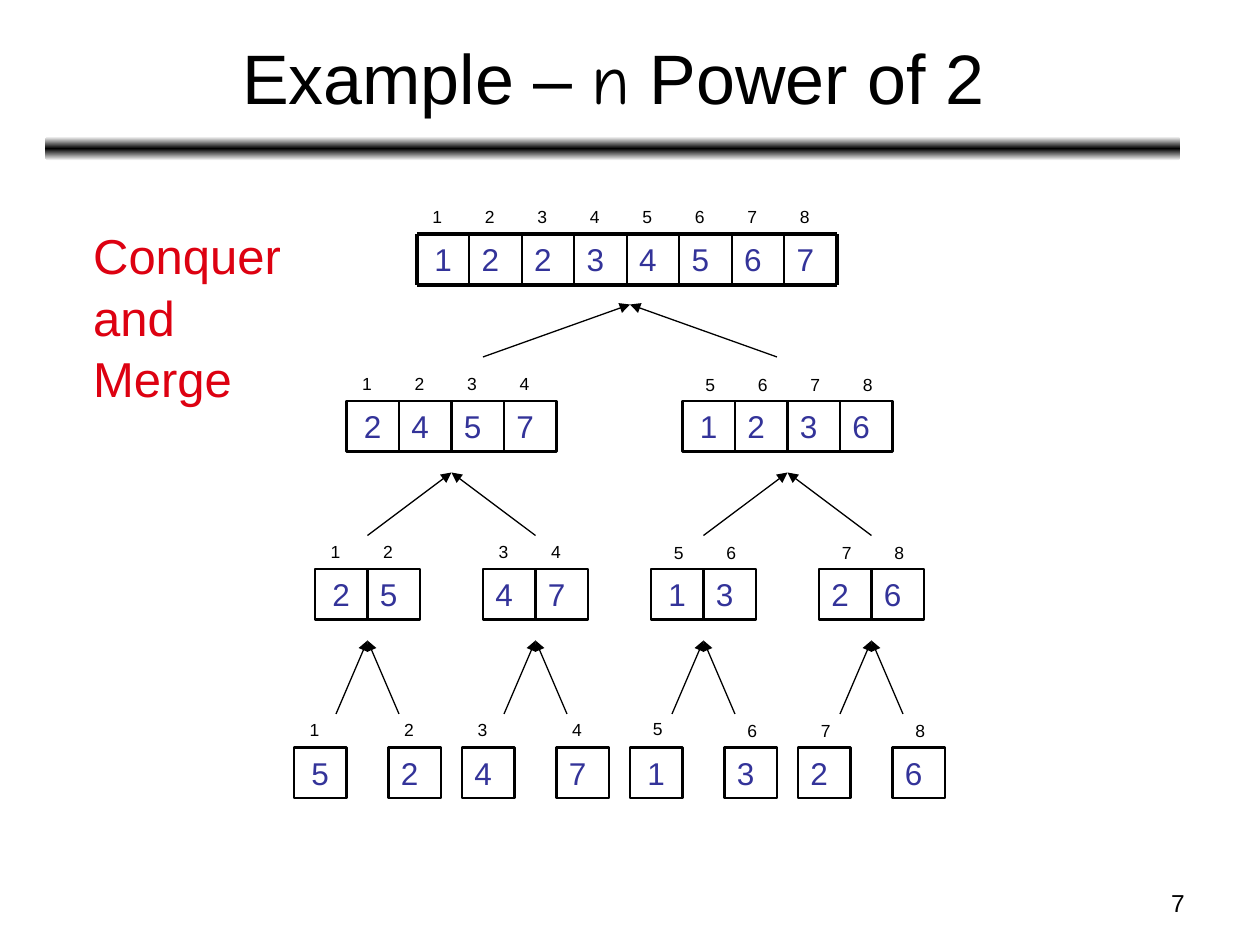
from dataclasses import dataclass

from lxml.etree import SubElement
from pptx import Presentation
from pptx.dml.color import RGBColor
from pptx.enum.shapes import MSO_CONNECTOR, MSO_SHAPE
from pptx.enum.text import MSO_ANCHOR, MSO_AUTO_SIZE, PP_ALIGN
from pptx.oxml.ns import qn
from pptx.util import Emu, Pt

EMU_PER_PX = 7620  # 120 px to the inch
CELL_W, CELL_H = 50, 48
LABEL_W, LABEL_H = 30, 32
BLACK, WHITE, NAVY, RED = "000000", "FFFFFF", "333399", "DD0111"


@dataclass(frozen=True)
class Block:
    """A run of neighbouring array cells; first is the index of its first cell."""
    left: int
    first: int
    values: str
    label_left: int
    label_top: int
    lead_centered: bool = False


@dataclass(frozen=True)
class Level:
    """One level of the merge tree, with the arrows that lead up to it."""
    top: int
    blocks: tuple[Block, ...]
    apexes: tuple[int, ...] = ()
    apex_y: int = 0
    foot_y: int = 0
    spread: int = 0
    ruled: bool = False


LEVELS = (
    Level(712, (
        Block(280, 1, "5", 283, 679, True),
        Block(370, 2, "2", 373, 679),
        Block(440, 3, "4", 443, 679),
        Block(530, 4, "7", 533, 679),
        Block(600, 5, "1", 610, 678, True),
        Block(690, 6, "3", 700, 680),
        Block(760, 7, "2", 770, 680),
        Block(850, 8, "6", 860, 680),
    )),
    Level(223, (Block(397, 1, "12234567", 400, 190, True),),
          (600,), 290, 340, 140, ruled=True),
    Level(382, (
        Block(330, 1, "2457", 333, 349, True),
        Block(650, 5, "1236", 660, 350, True),
    ), (430, 750), 450, 510, 80),
    Level(542, (
        Block(300, 1, "25", 303, 509, True),
        Block(460, 3, "47", 463, 509),
        Block(620, 5, "13", 630, 510, True),
        Block(780, 7, "26", 790, 510),
    ), (350, 510, 670, 830), 610, 680, 30),
)


def px(length: int) -> Emu:
    return Emu(length * EMU_PER_PX)


def rgb(color: str) -> RGBColor:
    return RGBColor.from_string(color)


def write(shape, lines: list[str], size: int, color: str,
          align=PP_ALIGN.LEFT, anchor=MSO_ANCHOR.TOP, wrap: bool = True):
    frame = shape.text_frame
    frame.word_wrap = wrap
    frame.vertical_anchor = anchor
    frame.text = "\n".join(lines)
    for paragraph in frame.paragraphs:
        paragraph.alignment = align
        paragraph.font.name = "Arial"
        paragraph.font.size = Pt(size)
        paragraph.font.color.rgb = rgb(color)
    return frame


def add_text(shapes, left: int, top: int, width: int, height: int, *args, **kwargs):
    box = shapes.add_textbox(px(left), px(top), px(width), px(height))
    return write(box, *args, **kwargs)


def add_line(shapes, x1: int, y1: int, x2: int, y2: int, weight: float,
             arrow: bool = False) -> None:
    line = shapes.add_connector(MSO_CONNECTOR.STRAIGHT, px(x1), px(y1), px(x2), px(y2))
    line.line.color.rgb = rgb(BLACK)
    line.line.width = Pt(weight)
    if arrow:
        SubElement(line.line._get_or_add_ln(), qn("a:headEnd"), type="triangle")
    SubElement(line._element.spPr, qn("a:effectLst"))


def add_cell(shapes, left: int, top: int, value: str, centered: bool, boxed: bool) -> None:
    area = px(left), px(top), px(CELL_W), px(CELL_H)
    if boxed:
        cell = shapes.add_shape(MSO_SHAPE.RECTANGLE, *area)
        cell.shadow.inherit = False
        cell.fill.background()
        cell.line.color.rgb = rgb(BLACK)
        cell.line.width = Pt(1.5)
    else:
        cell = shapes.add_textbox(*area)
    frame = write(cell, [value], 18, NAVY,
                  align=PP_ALIGN.CENTER if centered else PP_ALIGN.LEFT,
                  anchor=MSO_ANCHOR.MIDDLE if centered else MSO_ANCHOR.TOP)
    frame.paragraphs[0].space_before = Pt(3.6)


def add_block(shapes, block: Block, top: int, boxed: bool) -> None:
    for i, value in enumerate(block.values):
        label = add_text(shapes, block.label_left + i * CELL_W, block.label_top,
                         LABEL_W, LABEL_H, [str(block.first + i)], 10, BLACK)
        label.auto_size = MSO_AUTO_SIZE.SHAPE_TO_FIT_TEXT
        add_cell(shapes, block.left + i * CELL_W, top, value,
                 block.lead_centered and i == 0, boxed)


def add_rules(shapes, block: Block, top: int) -> None:
    count = len(block.values)
    right, bottom = block.left + count * CELL_W, top + CELL_H
    for y in (top, bottom):
        add_line(shapes, block.left, y, right, y, 2.25)
    for i in range(count + 1):
        x = block.left + i * CELL_W
        add_line(shapes, x, top, x, bottom, 2.25 if i in (0, count) else 1)


def add_level(slide, level: Level) -> None:
    shapes = slide.shapes.add_group_shape().shapes
    for block in level.blocks:
        add_block(shapes, block, level.top, not level.ruled)
        if level.ruled:
            add_rules(shapes, block, level.top)
    for apex in level.apexes:
        for foot in (apex - level.spread, apex + level.spread):
            add_line(shapes, apex, level.apex_y, foot, level.foot_y, 0.75, arrow=True)


def add_divider(slide) -> None:
    bar = slide.shapes.add_shape(MSO_SHAPE.ROUNDED_RECTANGLE,
                                 px(43), px(130), px(1081), px(23))
    bar.shadow.inherit = False
    bar.line.fill.background()
    bar.fill.gradient()
    bar.fill.gradient_angle = 90
    stops = bar._element.spPr.find(qn("a:gradFill")).find(qn("a:gsLst"))
    for stop in list(stops):
        stops.remove(stop)
    for position, color in ((0, WHITE), (50000, BLACK), (100000, WHITE)):
        stop = SubElement(stops, qn("a:gs"), pos=str(position))
        SubElement(stop, qn("a:srgbClr"), val=color)


def add_title(slide) -> None:
    frame = add_text(slide.shapes, 44, 13, 1080, 119, [""], 40, BLACK,
                     align=PP_ALIGN.CENTER, anchor=MSO_ANCHOR.MIDDLE)
    for text, font in (("Example – ", "Arial"), ("n", "Comic Neue"),
                       (" Power of 2", "Arial")):
        run = frame.paragraphs[0].add_run()
        run.text = text
        run.font.name = font


def main() -> None:
    deck = Presentation()
    deck.slide_width, deck.slide_height = px(1200), px(900)
    slide = deck.slides.add_slide(deck.slide_layouts[6])

    # Heading and page number
    add_divider(slide)
    add_text(slide.shapes, 860, 840, 280, 42, ["7"], 14, BLACK, align=PP_ALIGN.RIGHT)
    add_title(slide)

    # Merge tree
    for level in LEVELS:
        add_level(slide, level)

    # Phase caption
    caption = add_text(slide.shapes, 77, 206, 204, 180,
                       ["Conquer", "and", "Merge"], 28, RED, wrap=False)
    caption.auto_size = MSO_AUTO_SIZE.SHAPE_TO_FIT_TEXT
    for paragraph in caption.paragraphs:
        paragraph.line_spacing = 1.05

    deck.save("out.pptx")


if __name__ == "__main__":
    main()
